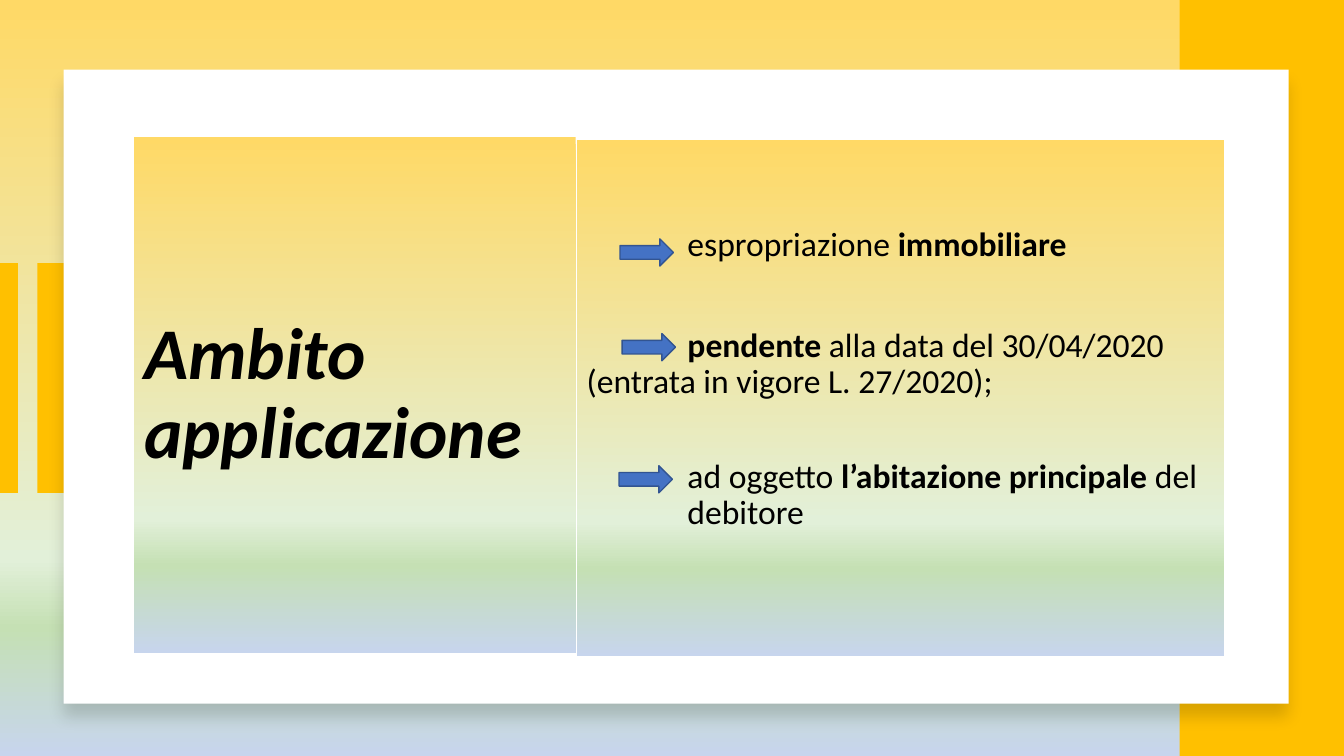
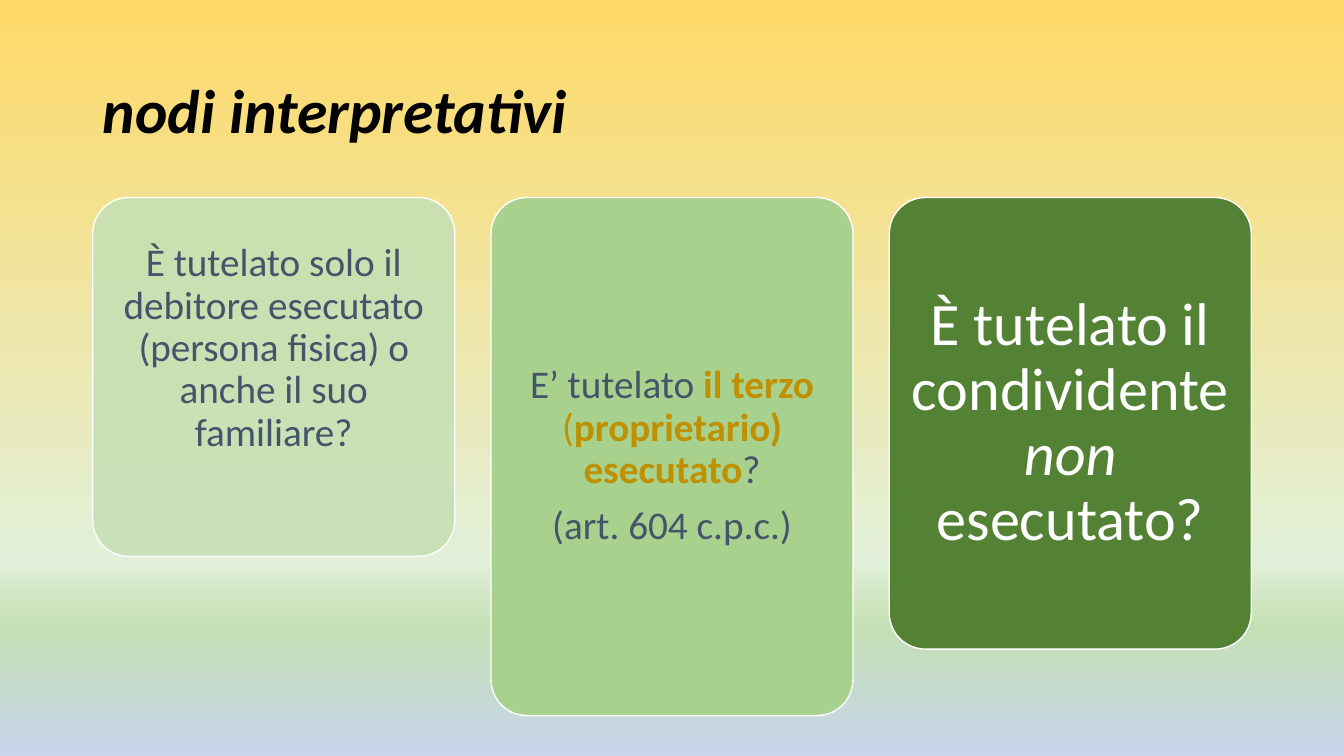
import pptx
import pptx.dml.color
import pptx.enum.shapes
import pptx.enum.text
import pptx.oxml
import pptx.oxml.ns
import pptx.util

Inches = pptx.util.Inches
Pt = pptx.util.Pt
qn = pptx.oxml.ns.qn
Shape = pptx.enum.shapes.MSO_SHAPE
Align = pptx.enum.text.PP_ALIGN
Anchor = pptx.enum.text.MSO_ANCHOR

FONT = "Calibri"
BLACK, WHITE, GOLD = "000000", "FFFFFF", "FFC000"
SLATE, OCHRE = "44546A", "BF9000"
ARROW_FILL, ARROW_LINE = "4472C4", "325491"
GRADIENT = [(0, "FFD966"), (74, "E2F0D9"), (83, "C5E0B4"), (100, "C7D5ED")]
TITLE_ONLY = 5


def color(hex_value):
    return pptx.dml.color.RGBColor.from_string(hex_value)


def add_child(parent, tag, **attributes):
    child = parent.makeelement(qn(tag), {name: str(value) for name, value in attributes.items()})
    parent.append(child)
    return child


def paint_gradient(fill, owner):
    fill.gradient()
    fill.gradient_angle = 270
    stops = owner.find(".//" + qn("a:gsLst"))
    for stop in list(stops):
        stops.remove(stop)
    for position, hex_value in GRADIENT:
        stop = add_child(stops, "a:gs", pos=position * 1000)
        add_child(stop, "a:srgbClr", val=hex_value)


def place(shape, box):
    shape.left, shape.top, shape.width, shape.height = map(Inches, box)


def add_block(slide, kind, box, fill, line=None, alpha=None):
    shape = slide.shapes.add_shape(kind, *map(Inches, box))
    shape.shadow.inherit = False
    shape.fill.solid()
    shape.fill.fore_color.rgb = color(fill)
    if alpha:
        add_child(shape.element.spPr.find(".//" + qn("a:srgbClr")), "a:alpha", val=alpha * 1000)
    if line:
        shape.line.color.rgb = color(line)
        shape.line.width = Pt(1)
    else:
        shape.line.fill.background()
    return shape


def format_frame(frame, insets=(0.1, 0.05, 0.1, 0.05)):
    frame.word_wrap = True
    frame.auto_size = pptx.enum.text.MSO_AUTO_SIZE.NONE
    frame.vertical_anchor = Anchor.MIDDLE
    (frame.margin_left, frame.margin_top,
     frame.margin_right, frame.margin_bottom) = map(Inches, insets)


def write_paragraph(paragraph, runs, size, hex_value, align=Align.LEFT):
    paragraph.alignment = align
    paragraph.line_spacing = 0.9
    paragraph.font.name = FONT
    paragraph.font.size = Pt(size)
    paragraph.font.color.rgb = color(hex_value)
    for text, style in runs:
        run = paragraph.add_run()
        run.text = text
        if "b" in style:
            run.font.bold = True
        if "i" in style:
            run.font.italic = True
        if "o" in style:
            run.font.color.rgb = color(OCHRE)


def write_paragraphs(frame, paragraphs, size, hex_value, align=Align.LEFT):
    for index, runs in enumerate(paragraphs):
        paragraph = frame.add_paragraph() if index else frame.paragraphs[0]
        write_paragraph(paragraph, runs, size, hex_value, align)
    return frame.paragraphs


def add_titled_slide(presentation):
    return presentation.slides.add_slide(presentation.slide_layouts[TITLE_ONLY])


def format_title(slide, box, text, size):
    title = slide.shapes.title
    place(title, box)
    format_frame(title.text_frame)
    write_paragraph(title.text_frame.paragraphs[0], [(text, "bi")], size, BLACK)
    return title


def add_side_bars(slide, box):
    left, top, width, height = box
    stripe_x = Inches(left + 0.08)
    stripe = slide.shapes.add_connector(
        pptx.enum.shapes.MSO_CONNECTOR.STRAIGHT,
        stripe_x, Inches(top), stripe_x, Inches(top + height))
    stripe.line.color.rgb = color(GOLD)
    stripe.line.width = Pt(14)
    add_child(stripe.element.spPr, "a:effectLst")
    add_block(slide, Shape.RECTANGLE, (left + 0.37, top, width - 0.37, height), GOLD)


def add_panel(slide, box):
    panel = add_block(slide, Shape.RECTANGLE, box, WHITE)
    effects = panel.element.spPr.find(qn("a:effectLst"))
    shadow = add_child(effects, "a:outerShdw", blurRad=Pt(11), dist=Pt(10),
                       dir=5400000, algn="t", rotWithShape=0)
    add_child(add_child(shadow, "a:srgbClr", val=BLACK), "a:alpha", val=15000)


def add_scope_list(slide, box):
    left, top = box[:2]
    body = slide.shapes.add_textbox(*map(Inches, box))
    paint_gradient(body.fill, body.element)
    format_frame(body.text_frame, (0.1, 0.05, 0.1, 0.42))
    paragraphs = write_paragraphs(body.text_frame, [
        [("espropriazione ", ""), ("immobiliare", "b")],
        [("pendente", "b"), (" alla data del 30/04/2020 (entrata in vigore L. 27/2020);", "")],
        [("ad oggetto ", ""), ("l’abitazione principale", "b"), (" del debitore", "")],
    ], 24, BLACK)
    layout = [(1, 0, 10), (0, 1, 46.4), (1, 0, 41.4)]
    for paragraph, (margin, indent, space) in zip(paragraphs, layout):
        paragraph.space_before = Pt(space)
        properties = paragraph._p.get_or_add_pPr()
        properties.set("marL", str(Inches(margin)))
        properties.set("indent", str(Inches(indent)))
    for across, down in [(0.43, 0.98), (0.45, 1.92), (0.42, 3.23)]:
        add_block(slide, Shape.RIGHT_ARROW, (left + across, top + down, 0.53, 0.27),
                  ARROW_FILL, ARROW_LINE)


def add_card(slide, box, fill, paragraphs, size, text_color, insets, alpha=None):
    card = add_block(slide, Shape.ROUNDED_RECTANGLE, box, fill, WHITE, alpha)
    card.adjustments[0] = 0.1
    format_frame(card.text_frame, insets)
    for paragraph in write_paragraphs(card.text_frame, paragraphs, size, text_color, Align.CENTER):
        paragraph.space_after = Pt(size * 0.35)


def build_scope_slide(presentation):
    slide = add_titled_slide(presentation)
    add_side_bars(slide, (0, 2.61, 0.71, 2.28))
    add_block(slide, Shape.RECTANGLE, (11.7, 0, 1.63, 7.5), GOLD)
    add_panel(slide, (0.63, 0.69, 12.15, 6.29))
    title = format_title(slide, (1.33, 1.36, 4.38, 5.12), "Ambito applicazione", 52)
    paint_gradient(title.fill, title.element)
    title.element.getparent().append(title.element)
    add_scope_list(slide, (5.72, 1.39, 6.42, 5.12))


def build_questions_slide(presentation):
    slide = add_titled_slide(presentation)
    format_title(slide, (0.92, 0.4, 11.5, 1.45), "nodi interpretativi", 44)
    cards = [
        (3.56, "C5E0B4",
         [[("È tutelato solo il debitore esecutato (persona fisica) o anche il suo familiare?", "")]],
         28, SLATE, (0.06, 0.04, 0.06, 0.6), 89),
        (5.14, "A9D18E",
         [[("E’ tutelato ", ""), ("il terzo", "bo"), (" (", "o"),
           ("proprietario) esecutato", "bo"), ("?", "")],
          [("(art. 604 c.p.c.)", "")]],
         28, SLATE, (0.06, 0.04, 0.06, 0.04)),
        (4.48, "548235",
         [[("È tutelato il condividente ", ""), ("non ", "i"), ("esecutato?", "")]],
         43, WHITE, (0.09, 0.06, 0.09, 0.06)),
    ]
    for index, (height, *content) in enumerate(cards):
        add_card(slide, (0.92 + index * 3.95, 1.96, 3.59, height), *content)


def main():
    presentation = pptx.Presentation()
    presentation.slide_width = Inches(13.33)
    presentation.slide_height = Inches(7.5)
    master = presentation.slide_master
    paint_gradient(master.background.fill, master.element)
    build_scope_slide(presentation)
    build_questions_slide(presentation)
    presentation.save("out.pptx")


if __name__ == "__main__":
    main()
